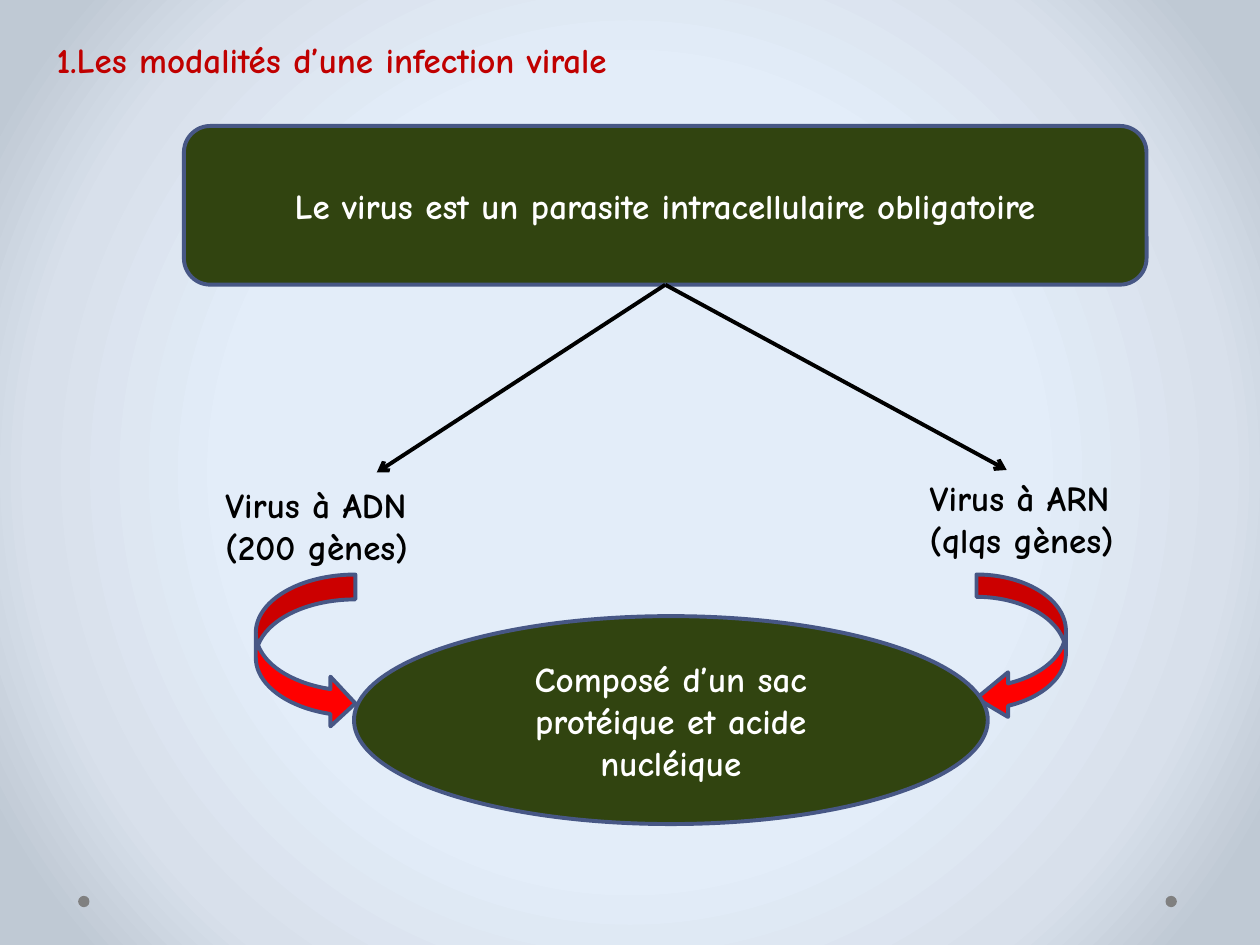
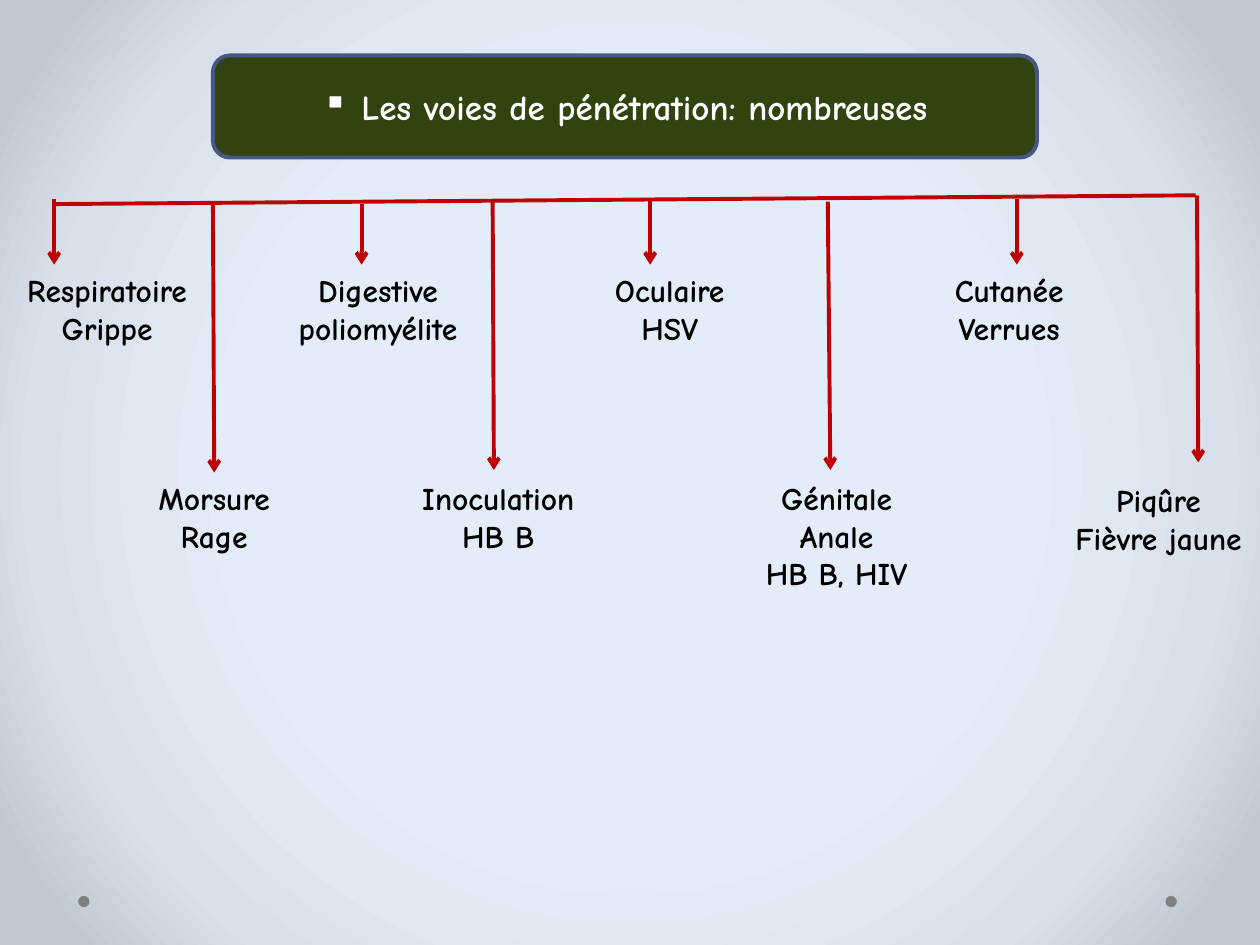
"""Build two slides on viral infection: its modalities and the routes of entry."""
from lxml.etree import SubElement
from pptx import Presentation
from pptx.dml.color import RGBColor
from pptx.enum.shapes import MSO_CONNECTOR, MSO_SHAPE
from pptx.enum.text import MSO_ANCHOR, MSO_AUTO_SIZE, PP_ALIGN
from pptx.oxml.ns import qn
from pptx.util import Inches, Pt

FONT = "Comic Neue"
BLACK = RGBColor(0x00, 0x00, 0x00)
WHITE = RGBColor(0xFF, 0xFF, 0xFF)
CRIMSON = RGBColor(0xC0, 0x00, 0x00)
RED = RGBColor(0xFF, 0x00, 0x00)
GREEN = RGBColor(0x31, 0x44, 0x10)
SLATE = RGBColor(0x47, 0x57, 0x85)
GREY = RGBColor(0x80, 0x80, 0x80)
BACKGROUND_STOPS = [(50, "E3EDF9"), (76, "D8E0EB"), (92, "BFC9D4")]
CORNER_DOTS = [(9.25, 7.11, 0.09, 0.09), (0.62, 7.11, 0.09, 0.09)]
LINE_WIDTH = 2.25

HEADING = (["1.Les modalités d’une infection virale"], (0.35, 0.26, 5.28, 0.74))
PARASITE = ("Le virus est un parasite intracellulaire obligatoire", (1.46, 1, 7.64, 1.26))
COMPOSITION = ("Composé d’un sac protéique et acide nucléique", (2.81, 4.89, 5.03, 1.65))
VIRUS_TYPES = [
    (["Virus à ADN", "(200 gènes)"], (1.69, 3.79, 2.04, 0.77), (2.99, 3.75)),
    (["Virus à ARN", "(qlqs gènes)"], (7.28, 3.73, 2.02, 0.77), (7.99, 3.73)),
]
CURVED_ARROWS = [
    (MSO_SHAPE.CURVED_RIGHT_ARROW, (2.03, 4.56, 0.79, 1.22), (0.25, 0.5, 0.25)),
    (MSO_SHAPE.CURVED_LEFT_ARROW, (7.75, 4.56, 0.71, 1.16), (0.25, 0.5, 0.353)),
]

ROUTES_TITLE = ("Les voies de pénétration: nombreuses", (1.69, 0.44, 6.54, 0.81))
ROUTES_BAR = ((9.49, 1.55), (0.43, 1.62))
ROUTES = [
    (["Respiratoire", "Grippe"], (0.01, 2.1, 1.68, 0.71), (0.43, 1.58), (0.43, 2.1)),
    (["Morsure", "Rage"], (1.1, 3.75, 1.2, 0.71), (1.69, 1.62), (1.7, 3.75)),
    (["Digestive", "poliomyélite"], (2.19, 2.1, 1.62, 0.71), (2.87, 1.62), (2.87, 2.1)),
    (["Inoculation", "HB B"], (3.19, 3.75, 1.53, 0.71), (3.91, 1.6), (3.92, 3.73)),
    (["Oculaire", "HSV"], (4.71, 2.1, 1.21, 0.71), (5.16, 1.58), (5.16, 2.1)),
    (["Génitale", "Anale", "HB B, HIV"], (5.87, 3.75, 1.54, 1.01), (6.57, 1.6), (6.59, 3.73)),
    (["Cutanée", "Verrues"], (7.43, 2.1, 1.16, 0.71), (8.07, 1.58), (8.07, 2.1)),
    (["Piqûre", "Fièvre jaune"], (8.34, 3.77, 1.71, 0.71), (9.5, 1.55), (9.51, 3.67)),
]


def inches(values):
    return [Inches(value) for value in values]


def write(frame, lines, size=20, color=BLACK, align=PP_ALIGN.LEFT, bullet=None):
    for index, line in enumerate(lines):
        paragraph = frame.add_paragraph() if index else frame.paragraphs[0]
        paragraph.alignment = align
        if bullet:
            properties = paragraph._p.get_or_add_pPr()
            properties.set("marL", str(Inches(0.31)))
            properties.set("indent", str(-Inches(0.31)))
            SubElement(properties, qn("a:buChar"), char=bullet)
        run = paragraph.add_run()
        run.text = line
        run.font.name, run.font.size, run.font.bold = FONT, Pt(size), True
        run.font.color.rgb = color


def add_label(slide, lines, place, **style):
    frame = slide.shapes.add_textbox(*inches(place)).text_frame
    frame.word_wrap = False
    frame.auto_size = MSO_AUTO_SIZE.SHAPE_TO_FIT_TEXT
    write(frame, lines, **style)


def add_figure(slide, kind, place, fill, outline=SLATE):
    figure = slide.shapes.add_shape(kind, *inches(place))
    figure.shadow.inherit = False
    figure.fill.solid()
    figure.fill.fore_color.rgb = fill
    if outline is None:
        figure.line.fill.background()
    else:
        figure.line.color.rgb = outline
        figure.line.width = Pt(LINE_WIDTH)
    return figure


def add_panel(slide, kind, text, place, bullet=None):
    panel = add_figure(slide, kind, place, GREEN)
    panel.text_frame.word_wrap = True
    panel.text_frame.vertical_anchor = MSO_ANCHOR.MIDDLE
    write(panel.text_frame, [text], color=WHITE, align=PP_ALIGN.CENTER, bullet=bullet)
    return panel


def add_line(slide, start, end, color, arrow=True):
    line = slide.shapes.add_connector(MSO_CONNECTOR.STRAIGHT, *inches(start + end))
    line.line.color.rgb = color
    line.line.width = Pt(LINE_WIDTH)
    if arrow:
        SubElement(line.line._get_or_add_ln(), qn("a:tailEnd"), type="arrow")
    SubElement(line._element.spPr, qn("a:effectLst"))
    return line


def add_slide(deck):
    slide = deck.slides.add_slide(deck.slide_layouts[6])
    slide.background.fill.gradient()
    gradient = slide.element.find(".//" + qn("a:gradFill"))
    for child in list(gradient):
        gradient.remove(child)
    stops = SubElement(gradient, qn("a:gsLst"))
    for position, color in BACKGROUND_STOPS:
        stop = SubElement(stops, qn("a:gs"), pos=str(position * 1000))
        SubElement(stop, qn("a:srgbClr"), val=color)
    circle = SubElement(gradient, qn("a:path"), path="circle")
    SubElement(circle, qn("a:fillToRect"), {side: "50000" for side in "ltrb"})
    for place in CORNER_DOTS:
        add_figure(slide, MSO_SHAPE.OVAL, place, GREY, outline=None)
    return slide


def build_modalities(deck):
    slide = add_slide(deck)
    add_label(slide, *HEADING, color=CRIMSON)
    parasite = add_panel(slide, MSO_SHAPE.ROUNDED_RECTANGLE, *PARASITE)
    left, top, width, height = PARASITE[1]
    for lines, place, tip in VIRUS_TYPES:
        branch = add_line(slide, (left + width / 2, top + height), tip, BLACK)
        branch.begin_connect(parasite, 2)
        add_label(slide, lines, place)
    for kind, place, bends in CURVED_ARROWS:
        curved_arrow = add_figure(slide, kind, place, RED)
        for index, bend in enumerate(bends):
            curved_arrow.adjustments[index] = bend
    add_panel(slide, MSO_SHAPE.OVAL, *COMPOSITION)


def build_routes(deck):
    slide = add_slide(deck)
    add_panel(slide, MSO_SHAPE.ROUNDED_RECTANGLE, *ROUTES_TITLE, bullet="▪")
    add_line(slide, *ROUTES_BAR, CRIMSON, arrow=False)
    for lines, place, start, tip in ROUTES:
        add_line(slide, start, tip, CRIMSON)
        add_label(slide, lines, place, size=18, align=PP_ALIGN.CENTER)


def main():
    deck = Presentation()
    deck.slide_width, deck.slide_height = Inches(10), Inches(7.5)
    build_modalities(deck)
    build_routes(deck)
    deck.save("out.pptx")


if __name__ == "__main__":
    main()
